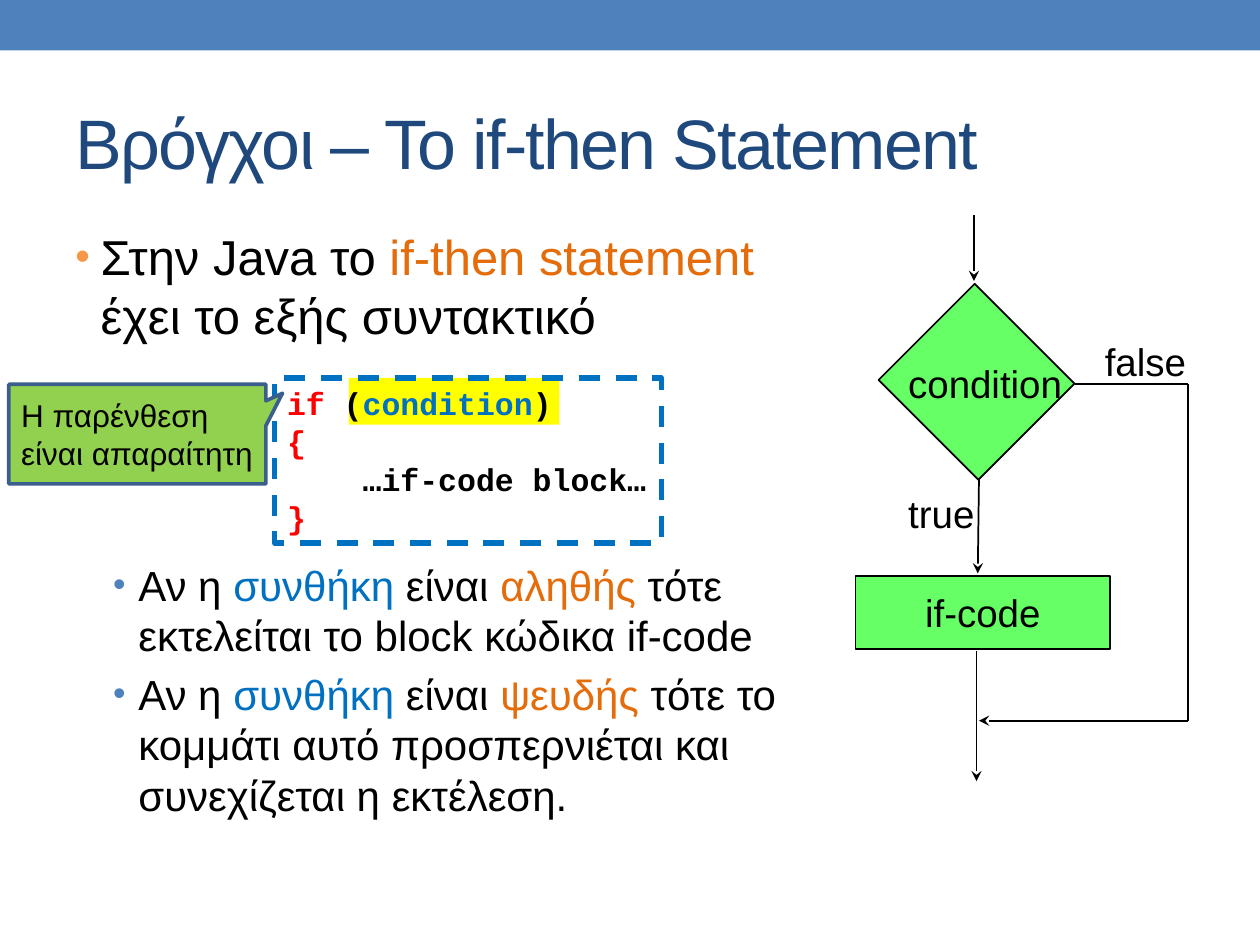
"""Build a slide on the if-then statement with its flowchart."""
from pptx import Presentation, util as u
from pptx.dml.color import RGBColor
from pptx.enum import dml, shapes, text
from pptx.oxml.ns import qn
from lxml import etree

BLACK, BLUE, ORANGE, RED = "000000", "0070C0", "E46C0A", "FF0000"
GREEN, NAVY = "66FF66", "1F497D"
RECT, CALL = shapes.MSO_SHAPE.RECTANGLE, shapes.MSO_SHAPE.RECTANGULAR_CALLOUT
MID = text.MSO_ANCHOR.MIDDLE


def hue(code):
    return RGBColor.from_string(code)


def write(box, paras, size=22, font="Arial", bold=False, wrap=False, anchor=text.MSO_ANCHOR.TOP,
          align=text.PP_ALIGN.LEFT, space=0, left=0, dot=None, track=0):
    """Fill a shape with paragraphs, each a list of (words, colour) runs."""
    frame = box.text_frame
    frame.word_wrap = wrap
    frame.vertical_anchor = anchor
    for i, runs in enumerate(paras):
        para = frame.add_paragraph() if i else frame.paragraphs[0]
        para.alignment = align
        para.space_before = u.Pt(space)
        if dot:
            props = para._p.get_or_add_pPr()
            props.set("marL", str(u.Inches(left)))
            props.set("indent", str(u.Inches(-0.2)))
            tint = etree.SubElement(props, qn("a:buClr"))
            etree.SubElement(tint, qn("a:srgbClr"), val=dot)
            etree.SubElement(props, qn("a:buSzPct"), val="85000")
            etree.SubElement(props, qn("a:buFont"), typeface="Arial")
            etree.SubElement(props, qn("a:buChar"), char="•")
        for words, code in runs:
            run = para.add_run()
            run.text = words
            run.font.size, run.font.name, run.font.bold = u.Pt(size), font, bold
            run.font.color.rgb = hue(code)
            if track:
                run._r.get_or_add_rPr().set("spc", str(track))


deck = Presentation()
deck.slide_width, deck.slide_height = u.Inches(10), u.Inches(7.5)
slide = deck.slides.add_slide(deck.slide_layouts[6])
items = slide.shapes

head = [[("Βρόγχοι – Το if-then Statement", NAVY)]]
lead = [[("Στην Java το ", BLACK), ("if-then statement ", ORANGE), ("έχει το εξής συντακτικό", BLACK)]]
cases = [
    [("Αν η ", BLACK), ("συνθήκη", BLUE), (" είναι ", BLACK), (state, ORANGE), (rest, BLACK)]
    for state, rest in [
        ("αληθής ", "τότε εκτελείται το block κώδικα if-code"),
        ("ψευδής ", "τότε το κομμάτι αυτό προσπερνιέται και συνεχίζεται η εκτέλεση."),
    ]
]
code = [
    [("if", RED), (" (", BLACK), ("condition", BLUE), (")", BLACK)],
    [("{", RED)],
    [("…if-code block…", BLACK)],
    [("}", RED)],
]
note = [[("Η παρένθεση είναι απαραίτητη", BLACK)]]

for place, paras, style in [
    ((0.5, 0.58, 9, 1.08), head, dict(size=40, wrap=True, anchor=MID, track=-96)),
    ((0.5, 1.75, 5.86, 1.1), lead, dict(size=28, wrap=True, space=5.6, left=0.2, dot="F79646")),
    ((0.5, 4.39, 5.86, 2.3), cases, dict(size=24, wrap=True, space=4.8, left=0.5, dot="4F81BD")),
]:
    write(items.add_textbox(*map(u.Inches, place)), paras, **style)

made = []
for kind, place, fill, line, width, paras, style in [
    (RECT, (0, 0, 10, 0.4), "4F81BD", None, 0, None, {}),
    (RECT, (2.77, 3, 1.67, 0.37), "FFFF00", None, 0, None, {}),
    (RECT, (6.79, 4.57, 2.02, 0.58), GREEN, BLACK, 1, [[("if-code", BLACK)]],
     dict(anchor=MID, align=text.PP_ALIGN.CENTER)),
    (RECT, (7.19, 2.49, 1.12, 1.08), GREEN, BLACK, 1, None, {}),
    (RECT, (2.18, 3, 3.07, 1.31), None, BLUE, 3, code, dict(size=18, font="Courier New", bold=True)),
    (CALL, (0.07, 3.05, 2.04, 0.79), "92D050", "3A5F8C", 2.08, note,
     dict(size=18, wrap=True, anchor=MID)),
]:
    part = items.add_shape(kind, *map(u.Inches, place))
    part.shadow.inherit = False
    if fill:
        part.fill.solid()
        part.fill.fore_color.rgb = hue(fill)
    else:
        part.fill.background()
    if line:
        part.line.color.rgb = hue(line)
        part.line.width = u.Pt(width)
    else:
        part.line.fill.background()
    if paras:
        write(part, paras, **style)
    made.append(part)

band, mark, step, test, block, hint = made
test.rotation = 45
block.line.dash_style = dml.MSO_LINE.DASH
inner = block.text_frame.paragraphs[2]
inner._p.get_or_add_pPr().set("marL", str(u.Inches(0.6)))
hint.adjustments[0] = 0.565
hint.adjustments[1] = -0.41

for place, word in [
    ((7.11, 2.81, 1.44, 0.47), "condition"),
    ((8.67, 2.63, 0.86, 0.47), "false"),
    ((7.11, 3.84, 0.74, 0.47), "true"),
]:
    write(items.add_textbox(*map(u.Inches, place)), [[(word, BLACK)]])

for ends, tip in [
    ((7.73, 1.71, 7.73, 2.23), True),
    ((7.77, 3.8, 7.76, 4.55), True),
    ((7.75, 5.17, 7.75, 6.2), True),
    ((8.53, 3.05, 9.43, 3.05), False),
    ((9.43, 3.05, 9.43, 5.72), False),
    ((9.43, 5.72, 7.77, 5.72), True),
]:
    wire = items.add_connector(shapes.MSO_CONNECTOR.STRAIGHT, *map(u.Inches, ends))
    wire.line.color.rgb = hue(BLACK)
    wire.line.width = u.Pt(1)
    if tip:
        etree.SubElement(wire.line._get_or_add_ln(), qn("a:tailEnd"), type="stealth")
    etree.SubElement(wire._element.spPr, qn("a:effectLst"))

deck.save("out.pptx")
